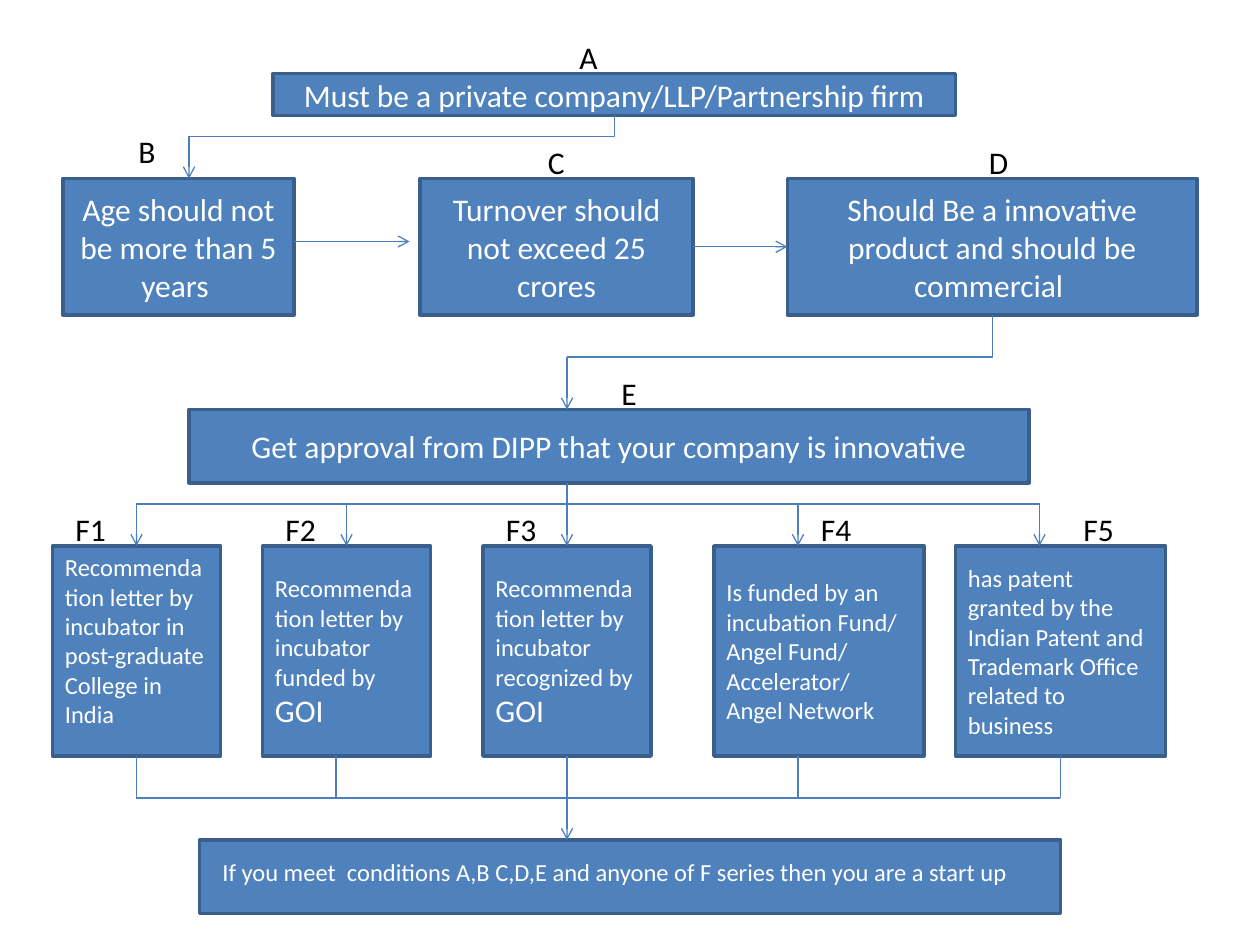
from lxml import etree
from pptx import Presentation
from pptx.dml.color import RGBColor
from pptx.enum.shapes import MSO_CONNECTOR, MSO_SHAPE
from pptx.enum.text import MSO_ANCHOR, MSO_AUTO_SIZE, PP_ALIGN
from pptx.oxml.ns import qn
from pptx.util import Emu, Pt

STRAIGHT = MSO_CONNECTOR.STRAIGHT
ELBOW = MSO_CONNECTOR.ELBOW
RECTANGLE = MSO_SHAPE.RECTANGLE
MIDDLE = MSO_ANCHOR.MIDDLE
GROW = MSO_AUTO_SIZE.SHAPE_TO_FIT_TEXT
LEFT = PP_ALIGN.LEFT
CENTER = PP_ALIGN.CENTER
EMU_PER_PX = 7620
BLANK_LAYOUT = 6


def px(value):
    return Emu(int(value * EMU_PER_PX))


def color(value):
    return RGBColor.from_string(value)


def write(paragraph, text, size=18, fill="FFFFFF", font="Calibri", align=LEFT):
    paragraph.alignment = align
    run = paragraph.add_run()
    run.text = text
    run.font.size = Pt(size)
    run.font.name = font
    run.font.color.rgb = color(fill)


class Flowchart:
    box_fill = "4F81BD"
    box_line = "3A5F8C"
    connector_line = "4B7EBC"
    label_color = "000000"
    label_height = 48

    def __init__(self, slide):
        self.slide = slide

    def box(self, left, top, width, height, runs=(), align=CENTER):
        shape = self.slide.shapes.add_shape(
            RECTANGLE, px(left), px(top), px(width), px(height))
        shape.shadow.inherit = False
        shape.fill.solid()
        shape.fill.fore_color.rgb = color(self.box_fill)
        shape.line.color.rgb = color(self.box_line)
        shape.line.width = Pt(2)
        shape.text_frame.word_wrap = True
        shape.text_frame.vertical_anchor = MIDDLE
        for text, size in runs:
            write(shape.text_frame.paragraphs[0], text, size=size, align=align)

    def text(self, left, top, width, height, text, **style):
        shape = self.slide.shapes.add_textbox(
            px(left), px(top), px(width), px(height))
        shape.text_frame.word_wrap = True
        shape.text_frame.auto_size = GROW
        write(shape.text_frame.paragraphs[0], text, **style)

    def label(self, left, top, width, text):
        self.text(left, top, width, self.label_height, text, fill=self.label_color)

    def line(self, x1, y1, x2, y2, arrow=False, kind=STRAIGHT):
        connector = self.slide.shapes.add_connector(
            kind, px(x1), px(y1), px(x2), px(y2))
        connector.line.color.rgb = color(self.connector_line)
        connector.line.width = Pt(0.75)
        properties = connector._element.spPr
        if arrow:
            outline = properties.find(qn("a:ln"))
            etree.SubElement(outline, qn("a:tailEnd"), type="arrow")
        etree.SubElement(properties, qn("a:effectLst"))
        return connector

    def elbow(self, x1, y1, x2, y2):
        run, drop = x1 - x2, y2 - y1
        left = (x1 + x2 - drop) / 2
        top = (y1 + y2 - run) / 2
        connector = self.line(left, top, left + drop, top + run, kind=ELBOW)
        properties = connector._element.spPr
        properties.find(qn("a:xfrm")).set("rot", "5400000")
        properties.find(qn("a:prstGeom")).set("prst", "bentConnector2")


def draw_conditions(chart):
    chart.box(260, 70, 650, 40, [("Must be a private company/LLP/Partnership firm", 18)])
    for left, width, text in (
        (60, 220, "Age should not be more than 5 years "),
        (400, 260, "Turnover should not exceed 25 crores"),
        (750, 390, "Should Be a innovative product and should be commercial "),
    ):
        chart.box(left, 170, width, 130, [(text, 18)])
    chart.box(180, 390, 800, 70,
              [("Get approval from DIPP that your company is innovative", 18)])

    chart.elbow(585, 110, 180, 130)
    chart.line(180, 130, 180, 170, arrow=True)
    chart.line(280, 230, 390, 230, arrow=True)
    chart.line(660, 235, 750, 235, arrow=True)
    chart.elbow(945, 300, 540, 340)
    chart.line(540, 340, 540, 390, arrow=True)

    for left, top, width, text in (
        (540, 30, 50, "A"), (120, 120, 50, "B"), (510, 130, 80, "C"),
        (930, 130, 60, "D"), (580, 350, 60, "E"),
    ):
        chart.label(left, top, width, text)


def draw_alternatives(chart):
    letter = "Recommendation letter by incubator "
    alternatives = (
        (50, 160, 130, 130, 60, 60, ()),
        (250, 160, 330, 320, 260, 80, ((letter + "funded by ", 14), ("GOI", 18))),
        (460, 160, 540, 540, 470, 80, ((letter + "recognized by ", 14), ("GOI", 18))),
        (680, 200, 760, 760, 770, 60,
         (("Is funded by an incubation Fund/ Angel Fund/ Accelerator/ Angel Network", 14),)),
        (910, 200, 990, 1010, 1020, 70,
         (("has patent granted by the Indian Patent and Trademark Office "
           "related to  business", 14),)),
    )
    chart.line(130, 480, 990, 480)
    chart.line(130, 760, 1010, 760)
    chart.line(540, 460, 540, 480)
    for number, (left, width, entry, leave, label_left, label_width, runs) in enumerate(
            alternatives, start=1):
        chart.box(left, 520, width, 200, runs, align=LEFT)
        chart.line(entry, 480, entry, 520, arrow=True)
        chart.line(leave, 720, leave, 760)
        chart.label(label_left, 480, label_width, f"F{number}")
    chart.text(50, 520, 160, 218,
               letter + "in post-graduate College in India", size=14)


def draw_result(chart):
    chart.box(190, 800, 820, 70)
    chart.line(540, 760, 540, 800, arrow=True)
    chart.text(200, 810, 810, 41,
               "If you meet  conditions A,B C,D,E and anyone of F series "
               "then you are a start up", size=14)


def main():
    presentation = Presentation()
    presentation.slide_width = px(1200)
    presentation.slide_height = px(900)
    slide = presentation.slides.add_slide(presentation.slide_layouts[BLANK_LAYOUT])
    chart = Flowchart(slide)
    draw_conditions(chart)
    draw_alternatives(chart)
    draw_result(chart)
    presentation.save("out.pptx")


if __name__ == "__main__":
    main()
